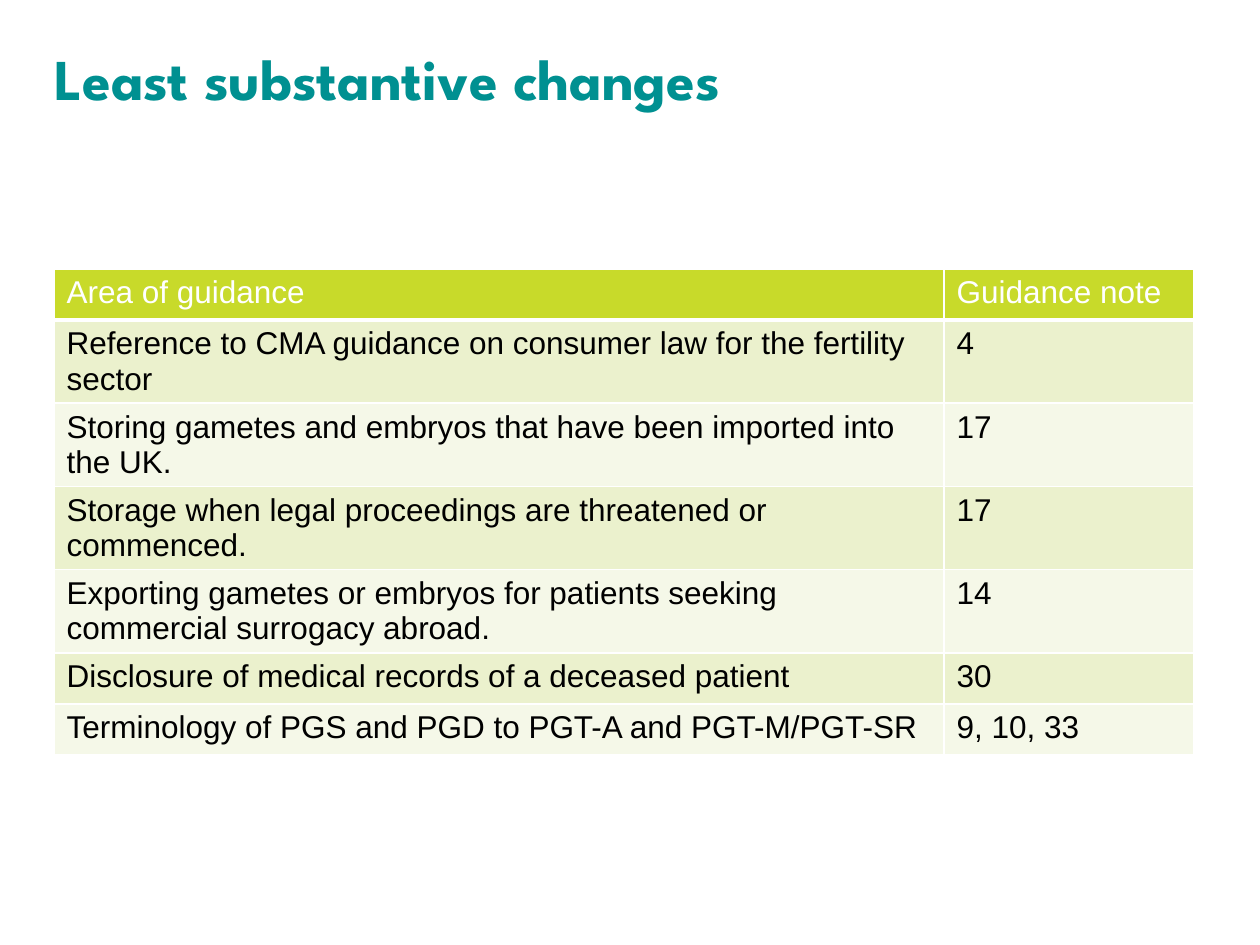
"""Build the slide that lists the least substantive guidance changes."""
from lxml import etree
from pptx import Presentation
from pptx.dml.color import RGBColor
from pptx.enum.text import MSO_ANCHOR, PP_ALIGN
from pptx.oxml.ns import qn
from pptx.util import Emu, Pt

TOP = MSO_ANCHOR.TOP
LEFT = PP_ALIGN.LEFT
TEAL = RGBColor(0x00, 0x90, 0x91)
LIME = RGBColor(0xC8, 0xDA, 0x2A)
PALE = RGBColor(0xEB, 0xF1, 0xCD)
PALER = RGBColor(0xF5, 0xF8, 0xE8)
WHITE = RGBColor(0xFF, 0xFF, 0xFF)
BLACK = RGBColor(0x00, 0x00, 0x00)

GUIDANCE = [
    ("Area of guidance", "Guidance note"),
    ("Reference to CMA guidance on consumer law for the fertility sector", "4"),
    ("Storing gametes and embryos that have been imported into the UK.", "17"),
    ("Storage when legal proceedings are threatened or commenced.", "17"),
    ("Exporting gametes or embryos for patients seeking commercial surrogacy abroad.", "14"),
    ("Disclosure of medical records of a deceased patient", "30"),
    ("Terminology of PGS and PGD to PGT-A and PGT-M/PGT-SR", "9, 10, 33"),
]


def px(length):
    return Emu(round(length * 914400 / 126))


class SlideBuilder:
    title_font = "League Spartan"
    body_font = "Arial"

    def __init__(self, presentation):
        self.slide = presentation.slides.add_slide(presentation.slide_layouts[5])

    def add_text(self, paragraph, text, font, size, color, bold=False):
        paragraph.alignment = LEFT
        run = paragraph.add_run()
        run.text = text
        run.font.name = font
        run.font.size = Pt(size)
        run.font.bold = bold
        run.font.color.rgb = color

    def title(self, text, left, top, width, height):
        heading = self.slide.shapes.title
        heading.left, heading.top = px(left), px(top)
        heading.width, heading.height = px(width), px(height)
        frame = heading.text_frame
        frame.margin_left = frame.margin_top = frame.margin_right = frame.margin_bottom = 0
        frame.vertical_anchor = TOP
        frame.word_wrap = True
        paragraph = frame.paragraphs[0]
        paragraph.line_spacing = Pt(33)
        self.add_text(paragraph, text, self.title_font, 33, TEAL, True)

    def borders(self, cell, widths):
        properties = cell._tc.get_or_add_tcPr()
        for index, (side, width) in enumerate(widths.items()):
            line = etree.Element(qn(f"a:ln{side}"), w=str(Pt(width)))
            fill = etree.SubElement(line, qn("a:solidFill"))
            etree.SubElement(fill, qn("a:srgbClr"), val=str(WHITE))
            properties.insert(index, line)

    def table(self, rows, left, top, column_widths, row_height):
        table = self.slide.shapes.add_table(
            len(rows), len(column_widths), px(left), px(top),
            px(sum(column_widths)), px(row_height * len(rows))).table
        for column, width in zip(table.columns, column_widths):
            column.width = px(width)
        for row_index, row in enumerate(rows):
            table.rows[row_index].height = px(row_height)
            header = row_index == 0
            fill = LIME if header else PALE if row_index % 2 else PALER
            for column_index, text in enumerate(row):
                cell = table.cell(row_index, column_index)
                cell.fill.solid()
                cell.fill.fore_color.rgb = fill
                self.borders(cell, {"L": 1, "R": 1, "T": 3 if row_index == 1 else 1,
                                    "B": 3 if header else 1})
                self.add_text(cell.text_frame.paragraphs[0], text, self.body_font, 18,
                              WHITE if header else BLACK)


def main():
    presentation = Presentation()
    presentation.slide_width, presentation.slide_height = px(1260), px(945)
    builder = SlideBuilder(presentation)
    builder.title("Least substantive changes", 54, 54, 1150, 60)
    builder.table(GUIDANCE, 54, 269, (890, 250), 51)
    presentation.save("out.pptx")


if __name__ == "__main__":
    main()
